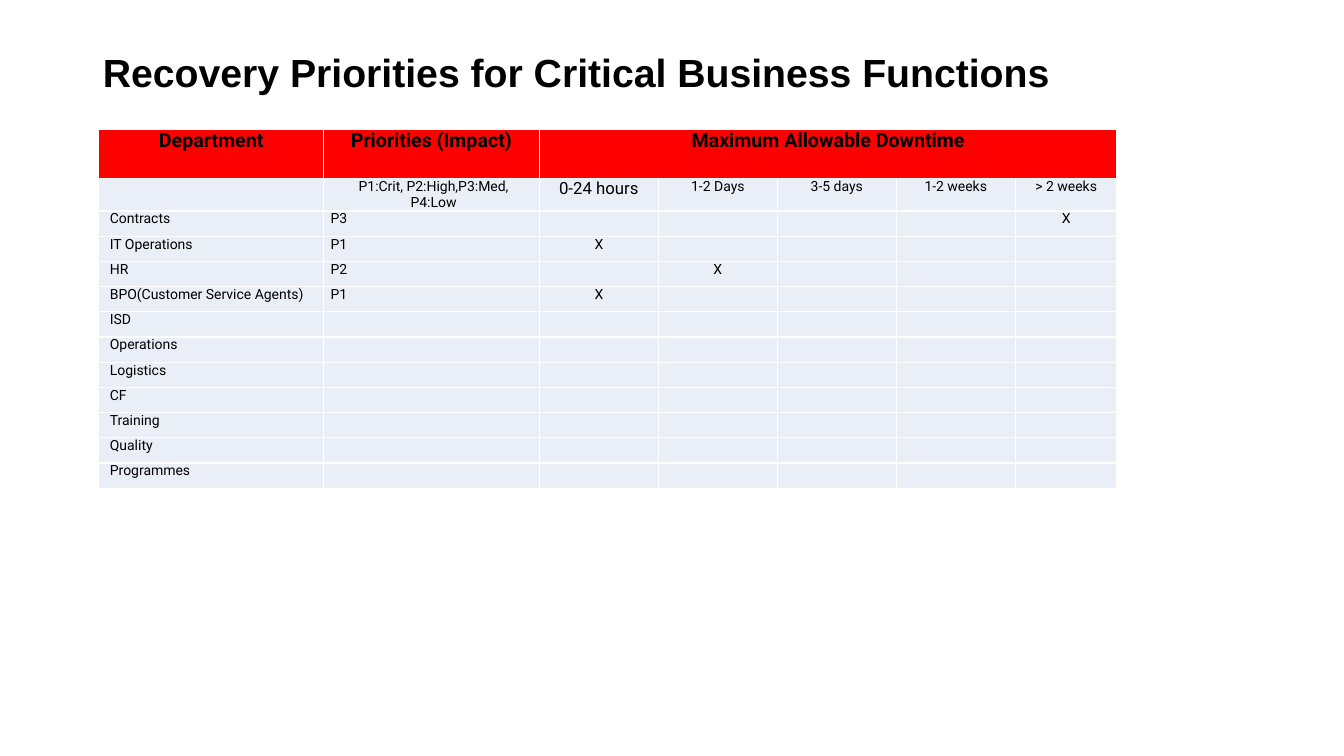
from lxml import etree
from pptx import Presentation
from pptx import util as u
from pptx.dml.color import RGBColor
from pptx.enum import text
from pptx.oxml.ns import qn

TITLE = "Recovery Priorities for Critical Business Functions"
HEADS = ["Department", "Priorities (Impact)", "Maximum Allowable Downtime"]
SCALE = "P1:Crit, P2:High,P3:Med, P4:Low"
TIMES = ["0-24 hours", "1-2 Days", "3-5 days", "1-2 weeks", "> 2 weeks"]
# Department, priority, downtime
UNITS = [
    ("Contracts", "P3", "> 2 weeks"),
    ("IT Operations", "P1", "0-24 hours"),
    ("HR", "P2", "1-2 Days"),
    ("BPO(Customer Service Agents)", "P1", "0-24 hours"),
    ("ISD", "", ""),
    ("Operations", "", ""),
    ("Logistics", "", ""),
    ("CF", "", ""),
    ("Training", "", ""),
    ("Quality", "", ""),
    ("Programmes", "", ""),
]
WIDTHS = [2.23, 2.14, 1.18, 1.18, 1.18, 1.18, 1.01]
HEAD_H, ROW_H = 0.49, 0.25
RED, PALE, WHITE, BLACK = "FF0000", "EAEFF7", "FFFFFF", "000000"


def color(code):
    return RGBColor.from_string(code)


def write(para, words, size, face, bold=False):
    run = para.add_run()
    run.text = words
    font = run.font
    font.size, font.name, font.bold = u.Pt(size), face, bold
    font.color.rgb = color(BLACK)


def edge(cell):
    """Draw a white one-point line on each side of the cell."""
    props = cell._tc.get_or_add_tcPr()
    for spot, side in enumerate(("a:lnL", "a:lnR", "a:lnT", "a:lnB")):
        line = etree.Element(qn(side), w=str(u.Pt(1)))
        fill = etree.SubElement(line, qn("a:solidFill"))
        etree.SubElement(fill, qn("a:srgbClr"), val=WHITE)
        props.insert(spot, line)


def fill_cell(cell, words, size, fill, center, inset):
    cell.margin_left = u.Inches(inset)
    cell.margin_right = u.Inches(0.07)
    cell.margin_top = cell.margin_bottom = 0
    cell.fill.solid()
    cell.fill.fore_color.rgb = color(fill)
    edge(cell)
    para = cell.text_frame.paragraphs[0]
    if center:
        para.alignment = text.PP_ALIGN.CENTER
    if words:
        write(para, words, size, "Roboto", fill == RED)
    else:
        # An empty cell keeps its row low only with a small end mark
        etree.SubElement(para._p, qn("a:endParaRPr"), sz=str(size * 100))


def main():
    deck = Presentation()
    deck.slide_width, deck.slide_height = u.Inches(13.33), u.Inches(7.5)
    slide = deck.slides.add_slide(deck.slide_layouts[5])

    title = slide.shapes.title
    title.left, title.top = u.Inches(0.92), u.Inches(0.39)
    title.width, title.height = u.Inches(12.01), u.Inches(0.7)
    frame = title.text_frame
    frame.vertical_anchor = text.MSO_ANCHOR.MIDDLE
    para = frame.paragraphs[0]
    para.alignment = text.PP_ALIGN.LEFT
    para.line_spacing = 0.9
    write(para, TITLE, 28, "Arial", True)

    rows = [HEADS + [""] * 4, ["", SCALE] + TIMES]
    for name, level, limit in UNITS:
        rows.append([name, level] + ["X" if time == limit else "" for time in TIMES])

    high = HEAD_H + ROW_H * (len(rows) - 1)
    table = slide.shapes.add_table(
        len(rows), len(WIDTHS), u.Inches(0.98), u.Inches(1.28),
        u.Inches(sum(WIDTHS)), u.Inches(high)).table
    table.horz_banding = False
    for col, width in zip(table.columns, WIDTHS):
        col.width = u.Inches(width)

    for r, row in enumerate(rows):
        table.rows[r].height = u.Inches(ROW_H if r else HEAD_H)
        for c, words in enumerate(row):
            size = 14 if r == 0 else 12 if words == TIMES[0] else 10
            inset = 0.11 if c == 0 and r > 1 or words == SCALE else 0.07
            fill_cell(table.cell(r, c), words, size, PALE if r else RED,
                      r < 2 or c > 1, inset)
    table.cell(0, 2).merge(table.cell(0, 6))

    deck.save("out.pptx")


if __name__ == "__main__":
    main()
